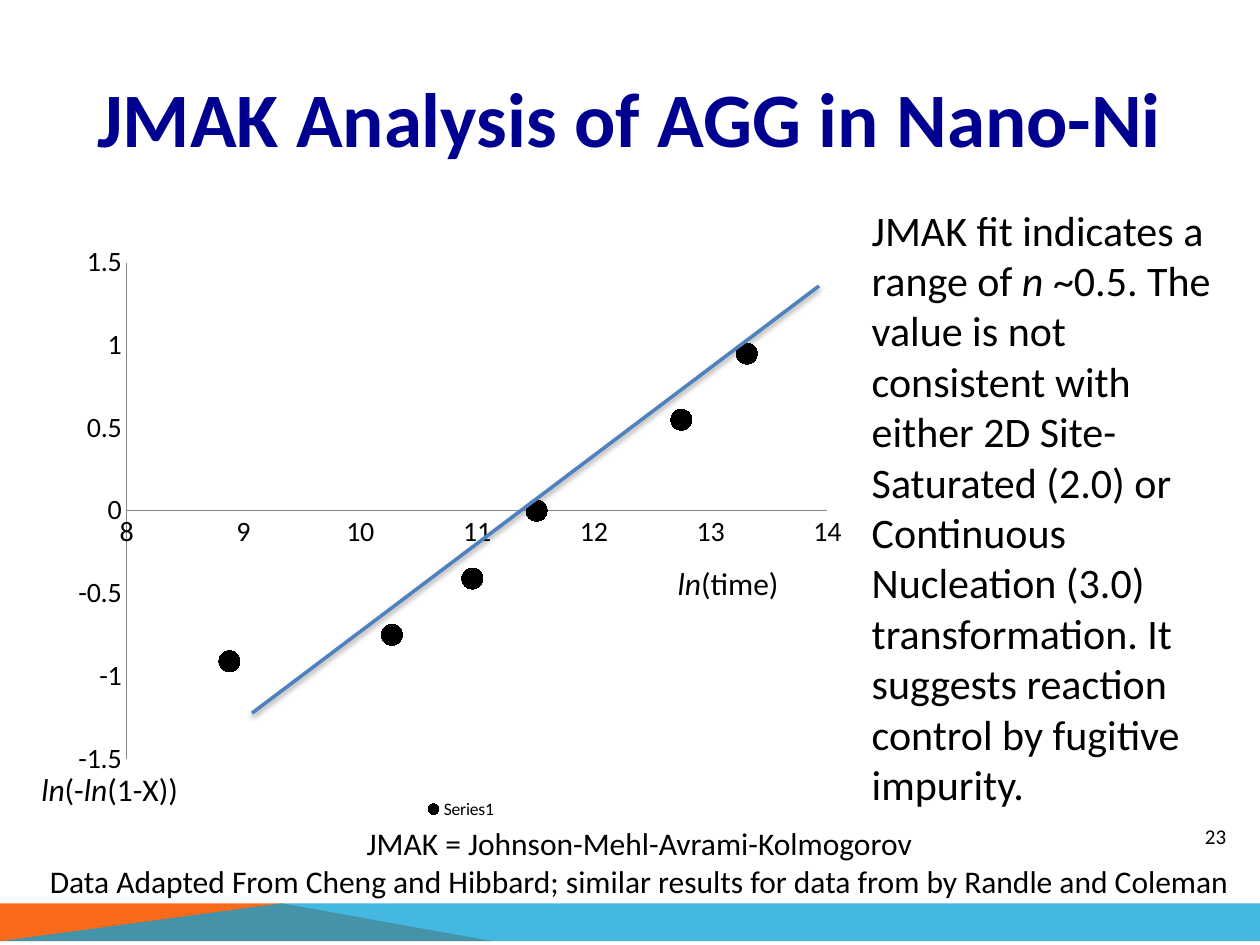
from lxml.etree import SubElement
from pptx import Presentation
from pptx.chart.data import XyChartData
from pptx.dml.color import RGBColor
from pptx.enum.chart import XL_CHART_TYPE, XL_LEGEND_POSITION, XL_MARKER_STYLE, XL_TICK_MARK
from pptx.enum.shapes import MSO_CONNECTOR
from pptx.enum.text import MSO_ANCHOR, PP_ALIGN
from pptx.oxml import parse_xml
from pptx.oxml.ns import nsdecls, qn
from pptx.util import Inches, Pt

BLACK = RGBColor(0x00, 0x00, 0x00)
NAVY = RGBColor(0x00, 0x00, 0x90)
ORANGE = RGBColor(0xF9, 0x6A, 0x1B)
SKY = RGBColor(0x08, 0xA1, 0xD9)
BLUE = RGBColor(0x4F, 0x81, 0xBD)
GREY = RGBColor(0x86, 0x86, 0x86)
FONT = "Calibri"

prs = Presentation()
prs.slide_width, prs.slide_height = Inches(10), Inches(7.5)
COL, ROW = prs.slide_width / 100, prs.slide_height / 75
s = prs.slides.add_slide(prs.slide_layouts[5])


def grid(*cells):
    return [round(c * (ROW if i % 2 else COL)) for i, c in enumerate(cells)]


def write(tf, runs, size, align=PP_ALIGN.LEFT, color=BLACK, bold=False):
    p = tf.paragraphs[0]
    p.alignment = align
    for text, italic in runs:
        if text == "\v":
            p.add_line_break()
            continue
        r = p.add_run()
        r.text = text
        fmt = {"name": FONT, "size": Pt(size), "bold": bold, "italic": italic}
        for key, value in fmt.items():
            setattr(r.font, key, value)
        r.font.color.rgb = color


TOP, BOTTOM = 71.7, 74.7
bands = [
    (ORANGE, 100, [(0, BOTTOM), (0, TOP), (22.4, TOP), (39.1, BOTTOM)]),
    (SKY, 75, [(0, BOTTOM), (22.3, TOP), (100, TOP), (100, BOTTOM)]),
]
for color, alpha, points in bands:
    start, *rest = [grid(*pt) for pt in points]
    builder = s.shapes.build_freeform(*start)
    builder.add_line_segments(rest, close=True)
    sp = builder.convert_to_shape()
    sp.shadow.inherit = False
    sp.fill.solid()
    sp.fill.fore_color.rgb = color
    sp.line.fill.background()
    clr = sp.fill._xPr.find(".//" + qn("a:srgbClr"))
    SubElement(clr, qn("a:alpha"), val=str(alpha * 1000))

title = s.shapes.title
title.left, title.top, title.width, title.height = grid(5, 3, 90, 12.5)
title.text_frame.vertical_anchor = MSO_ANCHOR.MIDDLE
write(title.text_frame, [("JMAK Analysis of AGG in Nano-Ni", False)], 44, PP_ALIGN.CENTER, NAVY, True)

data = XyChartData()
series = data.add_series("Series1")
for x, y in [(8.88, -0.91), (10.27, -0.75), (10.96, -0.41), (11.51, 0), (12.75, 0.55), (13.31, 0.95)]:
    series.add_data_point(x, y)
chart = s.shapes.add_chart(XL_CHART_TYPE.XY_SCATTER, *grid(5, 18.5, 63.2, 46.9), data).chart
chart.has_title = False
chart.font.name, chart.font.size = FONT, Pt(10)
chart.font.color.rgb = BLACK
chart.has_legend = True
chart.legend.position = XL_LEGEND_POSITION.BOTTOM
chart.legend.include_in_layout = False
plot = chart.plots[0]
plot.vary_by_categories = False

marker = plot.series[0].marker
marker.style, marker.size = XL_MARKER_STYLE.CIRCLE, 12
marker.format.fill.solid()
marker.format.fill.fore_color.rgb = BLACK
marker.format.line.color.rgb = BLACK

for axis, low, high, step in [(chart.category_axis, 8, 14, 1), (chart.value_axis, -1.5, 1.5, 0.5)]:
    fmt = {"minimum_scale": low, "maximum_scale": high, "major_unit": step,
           "has_major_gridlines": False, "has_title": False,
           "major_tick_mark": XL_TICK_MARK.NONE, "minor_tick_mark": XL_TICK_MARK.NONE}
    for key, value in fmt.items():
        setattr(axis, key, value)
    axis.format.line.color.rgb = GREY
    axis.tick_labels.font.size = Pt(16)
    axis.tick_labels.number_format = "General"
    axis.tick_labels.number_format_is_linked = False

area = chart._chartSpace.find(".//" + qn("c:plotArea"))
for old in area.findall(qn("c:layout")):
    area.remove(old)
layout = parse_xml(f"<c:layout {nsdecls('c')}><c:manualLayout/></c:layout>")
area.insert(0, layout)
for tag, val in [("layoutTarget", "inner"), ("xMode", "edge"), ("yMode", "edge"),
                 ("x", "0.08"), ("y", "0.05"), ("w", "0.88"), ("h", "0.84")]:
    SubElement(layout[0], qn(f"c:{tag}"), val=val)

boxes = [
    ((52.8, 44.3, 10.2, 4), [("ln", True), ("(time)", False)],
     18, PP_ALIGN.LEFT, MSO_ANCHOR.TOP, False),
    ((2.3, 60.6, 13.6, 4), [("ln", True), ("(-", False), ("ln", True), ("(1-X))", False)],
     18, PP_ALIGN.LEFT, MSO_ANCHOR.TOP, False),
    ((2.3, 64.9, 96.9, 7.1),
     [("JMAK = Johnson-Mehl-Avrami-Kolmogorov", False), ("\v", False),
      ("Data Adapted From Cheng and Hibbard; similar results for data from by Randle and Coleman", False)],
     18, PP_ALIGN.CENTER, MSO_ANCHOR.TOP, False),
    ((75, 64.4, 23.3, 4), [("23", False)], 12, PP_ALIGN.RIGHT, MSO_ANCHOR.MIDDLE, True),
    ((68.2, 15.7, 30.1, 49.5),
     [("JMAK fit indicates a range of ", False), ("n", True),
      (" ~0.5. The value is not consistent with either 2D Site-Saturated (2.0) or Continuous "
       "Nucleation (3.0) transformation. It suggests reaction control by fugitive impurity.", False)],
     24, PP_ALIGN.LEFT, MSO_ANCHOR.TOP, True),
]
for cells, runs, size, align, anchor, wrap in boxes:
    tf = s.shapes.add_textbox(*grid(*cells)).text_frame
    tf.word_wrap, tf.vertical_anchor = wrap, anchor
    write(tf, runs, size, align)

fit = s.shapes.add_connector(MSO_CONNECTOR.STRAIGHT, *grid(65, 22.7, 20, 56.6))
fit.line.color.rgb, fit.line.width = BLUE, Pt(2)
fit._element.spPr.append(parse_xml(
    f'<a:effectLst {nsdecls("a")}><a:outerShdw blurRad="{Pt(3.1)}" dist="{Pt(1.6)}" dir="5400000" '
    'rotWithShape="0"><a:srgbClr val="000000"><a:alpha val="38000"/></a:srgbClr>'
    '</a:outerShdw></a:effectLst>'))

prs.save("out.pptx")
